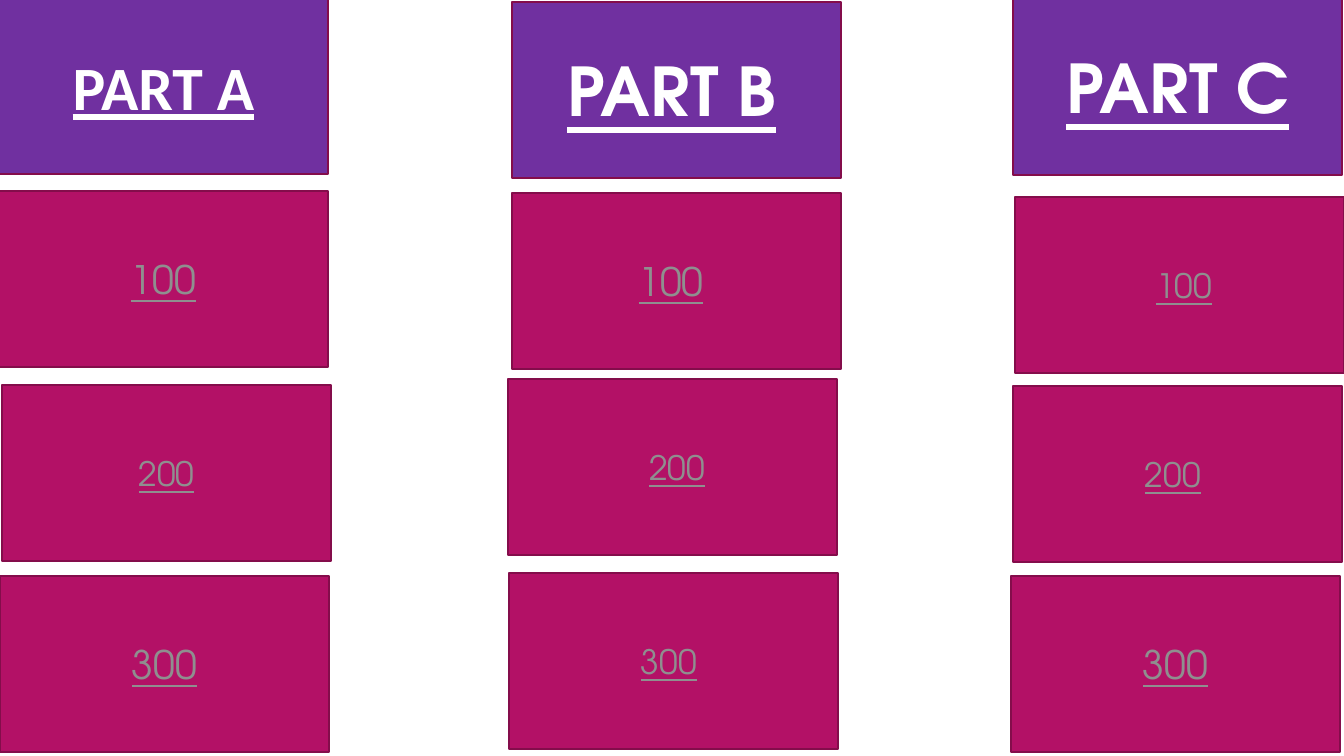
import pptx
import pptx.util
import pptx.dml.color
import pptx.enum.shapes
import pptx.enum.text

# Content: label, left, top (px), text size, space before, space after
HEADERS = [
    ("PART A", -1, -2, 44, "", ""),
    ("PART B", 512, 2, 48, "", " "),
    ("PART C", 1013, -1, 48, "", ""),
]
SCORES = [
    ("100", -1, 191, 28, "", ""),
    ("200", 2, 385, 24, "", ""),
    ("300", 0, 576, 28, "", ""),
    ("100", 512, 193, 28, "", " "),
    ("200", 508, 379, 24, " ", ""),
    ("300", 509, 573, 24, "", " "),
    ("100", 1015, 197, 24, " ", ""),
    ("200", 1013, 386, 24, "", " "),
    ("300", 1011, 576, 28, "", ""),
]
SLIDE_SIZE = (1344, 756)
CARD_SIZE = (329, 176)
COLORS = {"header": "7030A0", "score": "B31166", "border": "840D4B",
          "title": "FFFFFF", "number": "8F8F8F", "space": "FFFFFF"}
FONT = "TeX Gyre Adventor"
LABEL_FONTS = {"PART A": "Calibri"}
SPACE_SIZES = {"PART B": 24}
EMU_PER_PX = 12192000 / 1344


def px(length):
    return pptx.util.Emu(round(length * EMU_PER_PX))


def color(name):
    return pptx.dml.color.RGBColor.from_string(COLORS[name])


def add_span(para, text, ink, values):
    span = para.add_run()
    span.text = text
    for name, value in values.items():
        setattr(span.font, name, value)
    span.font.color.rgb = color(ink)


def add_card(page, card, fill, ink, bold):
    label, left, top, size, before, after = card
    box = page.shapes.add_shape(
        pptx.enum.shapes.MSO_SHAPE.RECTANGLE,
        px(left), px(top), *map(px, CARD_SIZE))
    box.shadow.inherit = False
    box.fill.solid()
    box.fill.fore_color.rgb = color(fill)
    box.line.color.rgb = color("border")
    box.line.width = pptx.util.Pt(1.5)

    frame = box.text_frame
    frame.word_wrap = True
    frame.vertical_anchor = pptx.enum.text.MSO_ANCHOR.MIDDLE
    para = frame.paragraphs[0]
    para.alignment = pptx.enum.text.PP_ALIGN.CENTER

    label_format = {"name": LABEL_FONTS.get(label, FONT), "bold": bold,
                    "size": pptx.util.Pt(size), "underline": True}
    space_format = {"name": FONT, "bold": False, "underline": False,
                    "size": pptx.util.Pt(SPACE_SIZES.get(label, size))}
    parts = [(before, "space", space_format), (label, ink, label_format),
             (after, "space", space_format)]
    for text, part_ink, values in parts:
        if text:
            add_span(para, text, part_ink, values)


def main():
    deck = pptx.Presentation()
    deck.slide_width, deck.slide_height = map(px, SLIDE_SIZE)
    page = deck.slides.add_slide(deck.slide_layouts[6])

    # Column headers
    for card in HEADERS:
        add_card(page, card, "header", "title", True)

    # Score cards
    for card in SCORES:
        add_card(page, card, "score", "number", False)

    deck.save("out.pptx")


if __name__ == "__main__":
    main()
